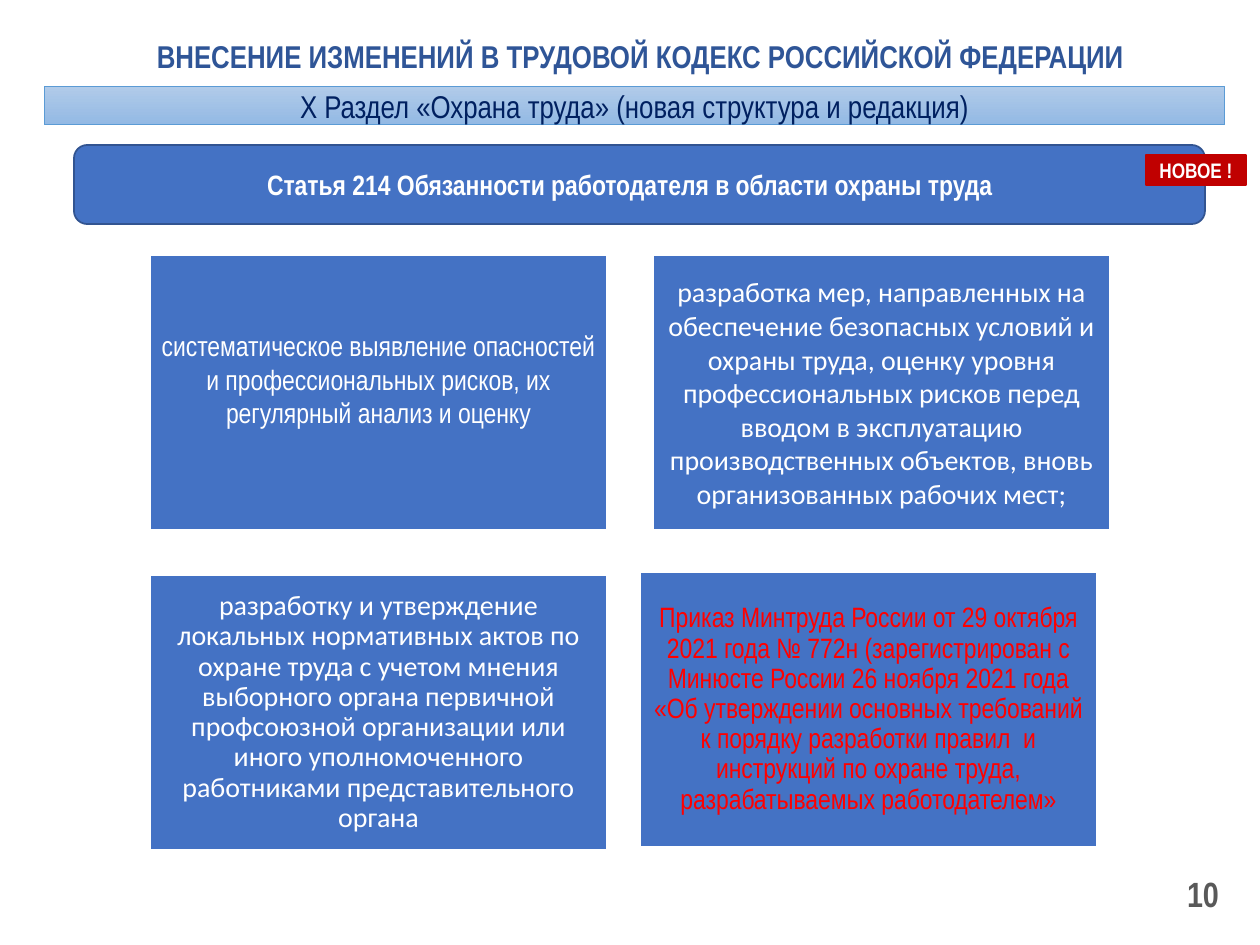
import dataclasses

import pptx
import pptx.dml.color
import pptx.enum.shapes
import pptx.enum.text
import pptx.util

PX = 914400 / 126
ALIGN = pptx.enum.text.PP_ALIGN
SHAPE = pptx.enum.shapes.MSO_SHAPE
NARROW = "Arial Narrow"
COLORS = {
    "white": "FFFFFF",
    "blue": "4472C4",
    "blue_edge": "325491",
    "title": "2F5597",
    "navy": "002060",
    "banner_top": "B1CBE9",
    "banner_bottom": "93B9E4",
    "banner_edge": "5B9BD5",
    "crimson": "C00000",
    "red": "FF0000",
    "gray": "595959",
}
CARD_WIDTH, CARD_HEIGHT = 457, 275
CARD_INSET = 9


@dataclasses.dataclass
class Area:
    left: int
    top: int
    width: int
    height: int

    def emu(self) -> list[int]:
        return [round(value * PX) for value in dataclasses.astuple(self)]


@dataclasses.dataclass
class Card:
    left: int
    top: int
    text: str
    font: str = "Calibri"
    color: str = "white"
    line_spacing: float = 1.0
    bottom_inset: int = CARD_INSET


CARDS = [
    Card(150, 255, "систематическое выявление опасностей и профессиональных рисков, "
         "их регулярный анализ и оценку", font=NARROW, bottom_inset=36),
    Card(653, 255, "разработка мер, направленных на обеспечение безопасных условий и "
         "охраны труда, оценку уровня профессиональных рисков перед вводом в "
         "эксплуатацию производственных объектов, вновь организованных рабочих мест;"),
    Card(150, 575, "разработку и утверждение локальных нормативных актов по охране труда "
         "с учетом мнения выборного органа первичной профсоюзной организации или иного "
         "уполномоченного работниками представительного органа", line_spacing=0.9),
    Card(640, 572, "Приказ Минтруда России от 29 октября 2021 года № 772н "
         "(зарегистрирован с Минюсте России 26 ноября 2021 года «Об утверждении основных "
         "требований к порядку разработки правил  и инструкций по охране труда, "
         "разрабатываемых работодателем»", font=NARROW, color="red", line_spacing=0.9),
]


def rgb(name: str) -> pptx.dml.color.RGBColor:
    return pptx.dml.color.RGBColor.from_string(COLORS[name])


def write_text(box, text: str, *, size: int, color: str, font: str = NARROW,
               bold: bool = False, align=ALIGN.CENTER, line_spacing: float = 1.0,
               insets: tuple[int, int, int, int] = (12, 0, 12, 0), wrap: bool = True) -> None:
    frame = box.text_frame
    frame.auto_size = pptx.enum.text.MSO_AUTO_SIZE.NONE
    frame.word_wrap = wrap
    frame.vertical_anchor = pptx.enum.text.MSO_ANCHOR.MIDDLE
    (frame.margin_left, frame.margin_top,
     frame.margin_right, frame.margin_bottom) = [round(inset * PX) for inset in insets]
    para = frame.paragraphs[0]
    para.alignment = align
    para.line_spacing = line_spacing
    span = para.add_run()
    span.text = text
    span.font.name = font
    span.font.size = pptx.util.Pt(size)
    span.font.bold = bold
    span.font.color.rgb = rgb(color)


def add_panel(page, area: Area, *, fill: str, edge: str, edge_width: float = 1,
              kind=SHAPE.RECTANGLE, fill_end: str | None = None):
    box = page.shapes.add_shape(kind, *area.emu())
    box.shadow.inherit = False
    if fill_end:
        box.fill.gradient()
        box.fill.gradient_angle = 270
        for stop, name in zip(box.fill.gradient_stops, (fill, fill_end)):
            stop.color.rgb = rgb(name)
    else:
        box.fill.solid()
        box.fill.fore_color.rgb = rgb(fill)
    box.line.color.rgb = rgb(edge)
    box.line.width = pptx.util.Pt(edge_width)
    return box


def add_card(page, card: Card) -> None:
    area = Area(card.left, card.top, CARD_WIDTH, CARD_HEIGHT)
    box = add_panel(page, area, fill="blue", edge="white")
    write_text(box, card.text, size=16, color=card.color, font=card.font,
               line_spacing=card.line_spacing,
               insets=(CARD_INSET, CARD_INSET, CARD_INSET, card.bottom_inset))


def main() -> None:
    deck = pptx.Presentation()
    deck.slide_width = pptx.util.Inches(10)
    deck.slide_height = pptx.util.Inches(7.5)
    page = deck.slides.add_slide(deck.slide_layouts[5])

    title = page.shapes.title
    title.left, title.top, title.width, title.height = Area(105, 16, 1071, 79).emu()
    write_text(title, "ВНЕСЕНИЕ ИЗМЕНЕНИЙ В ТРУДОВОЙ КОДЕКС РОССИЙСКОЙ ФЕДЕРАЦИИ",
               size=18, color="title", bold=True)

    number = page.shapes.add_textbox(*Area(937, 869, 294, 50).emu())
    write_text(number, "10", size=20, color="gray", bold=True, align=ALIGN.RIGHT)

    article = add_panel(page, Area(74, 145, 1131, 79), fill="blue", edge="blue_edge",
                        kind=SHAPE.ROUNDED_RECTANGLE)
    write_text(article, "Статья 214 Обязанности работодателя в области охраны труда",
               size=16, color="white", bold=True, insets=(12, 0, 31, 0))

    for card in CARDS:
        add_card(page, card)

    badge = add_panel(page, Area(1146, 155, 100, 30), fill="crimson", edge="crimson")
    write_text(badge, "НОВОЕ !", size=12, color="white", bold=True, wrap=False)

    banner = add_panel(page, Area(44, 86, 1181, 39), fill="banner_top",
                       fill_end="banner_bottom", edge="banner_edge", edge_width=0.5)
    write_text(banner, "Х Раздел «Охрана труда» (новая структура и редакция)",
               size=18, color="navy")

    deck.save("out.pptx")


if __name__ == "__main__":
    main()
